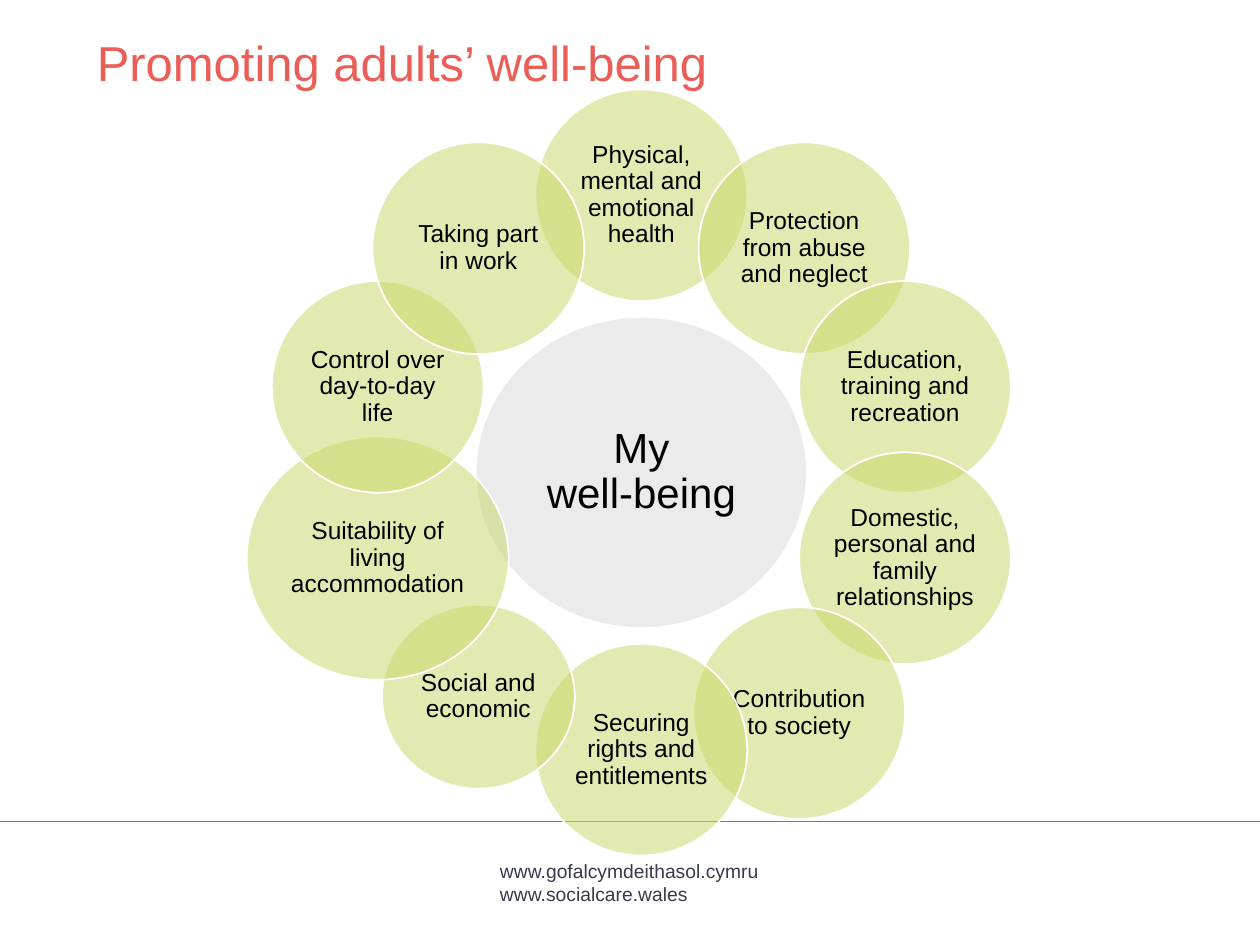
import math
from dataclasses import dataclass

import pptx
import pptx.dml.color
import pptx.enum.shapes
import pptx.enum.text
import pptx.oxml.ns
import pptx.util
from lxml import etree

Inches = pptx.util.Inches
Pt = pptx.util.Pt


@dataclass(frozen=True)
class Theme:
    font: str = "Arial"
    coral: str = "EB5E57"
    slate: str = "37394C"
    teal: str = "16AD85"
    grey: str = "D9D9D9"
    lime: str = "C9D765"
    white: str = "FFFFFF"
    black: str = "000000"
    title: int = 28
    hub: int = 24
    label: int = 14
    footer: int = 11


THEME = Theme()

# Ring centre, radius and usual circle size, in inches
MID_X, MID_Y, RADIUS, SIZE = 5.09, 3.75, 2.2, 1.68

# Label, width, height, shift from the ring; clockwise from the top
ASPECTS = [
    ("Physical, mental and emotional health", SIZE, SIZE, 0, 0),
    ("Protection from abuse and neglect", SIZE, SIZE, 0, 0),
    ("Education, training and recreation", SIZE, SIZE, 0, 0),
    ("Domestic, personal and family relationships", SIZE, SIZE, 0, 0),
    ("Contribution to society", SIZE, SIZE, -0.04, 0.13),
    ("Securing rights and entitlements", SIZE, SIZE, 0, 0),
    ("Social and economic", 1.53, 1.46, 0, 0),
    ("Suitability of living accommodation", 2.08, 1.93, 0, 0),
    ("Control over day-to-day life", SIZE, SIZE, 0, 0),
    ("Taking part in work", SIZE, SIZE, 0, 0),
]


def rgb(code):
    return pptx.dml.color.RGBColor.from_string(code)


def style(para, size, color):
    para.font.name = THEME.font
    para.font.size = Pt(size)
    para.font.color.rgb = rgb(color)


def add_text(slide, lines, box, size, color, space=1.0, wrap=True):
    frame = slide.shapes.add_textbox(*map(Inches, box)).text_frame
    frame.word_wrap = wrap
    frame.text = "\n".join(lines)
    for para in frame.paragraphs:
        para.line_spacing = space
        style(para, size, color)


def add_rule(slide, y):
    rule = slide.shapes.add_connector(
        pptx.enum.shapes.MSO_CONNECTOR.STRAIGHT,
        Inches(0), Inches(y), Inches(10), Inches(y))
    rule.line.color.rgb = rgb(THEME.teal)
    rule.line.width = Pt(1)
    etree.SubElement(rule._element.spPr, pptx.oxml.ns.qn("a:effectLst"))


def add_circle(slide, text, x, y, wide, high, fill, size, inset):
    """Half-clear ellipse centred on x, y, with its label inside."""
    shape = slide.shapes.add_shape(
        pptx.enum.shapes.MSO_SHAPE.OVAL,
        Inches(x - wide / 2), Inches(y - high / 2), Inches(wide), Inches(high))
    shape.shadow.inherit = False
    shape.fill.solid()
    shape.fill.fore_color.rgb = rgb(fill)
    tint = shape._element.spPr.find(".//" + pptx.oxml.ns.qn("a:srgbClr"))
    etree.SubElement(tint, pptx.oxml.ns.qn("a:alpha"), val="50000")
    shape.line.color.rgb = rgb(THEME.white)
    shape.line.width = Pt(1)

    frame = shape.text_frame
    frame.word_wrap = True
    frame.vertical_anchor = pptx.enum.text.MSO_ANCHOR.MIDDLE
    frame.margin_left = frame.margin_right = Inches(inset)
    frame.margin_top = frame.margin_bottom = Inches(inset)
    para = frame.paragraphs[0]
    para.text = text
    para.alignment = pptx.enum.text.PP_ALIGN.CENTER
    para.line_spacing = 0.9
    style(para, size, THEME.black)


def add_ring(slide):
    step = 2 * math.pi / len(ASPECTS)
    for i, (text, wide, high, dx, dy) in enumerate(ASPECTS):
        x = MID_X + RADIUS * math.sin(i * step) + dx
        y = MID_Y - RADIUS * math.cos(i * step) + dy
        add_circle(slide, text, x, y, wide, high, THEME.lime, THEME.label, 0.02)


def main():
    deck = pptx.Presentation()
    deck.slide_width, deck.slide_height = Inches(10), Inches(7.5)
    slide = deck.slides.add_slide(deck.slide_layouts[6])

    # Footer and rule
    add_text(slide, ["www.gofalcymdeithasol.cymru", "www.socialcare.wales"],
             (3.87, 6.77, 2.26, 0.46), THEME.footer, THEME.slate, wrap=False)
    add_rule(slide, 6.52)

    # Title
    add_text(slide, ["Promoting adults’ well-being"],
             (0.67, 0.26, 8.59, 1.13), THEME.title, THEME.coral, space=0.9)

    # Hub, then the ring of aspects around it
    add_circle(slide, "My\vwell-being", MID_X, MID_Y, 2.63, 2.47,
               THEME.grey, THEME.hub, 0.03)
    add_ring(slide)

    deck.save("out.pptx")


if __name__ == "__main__":
    main()
